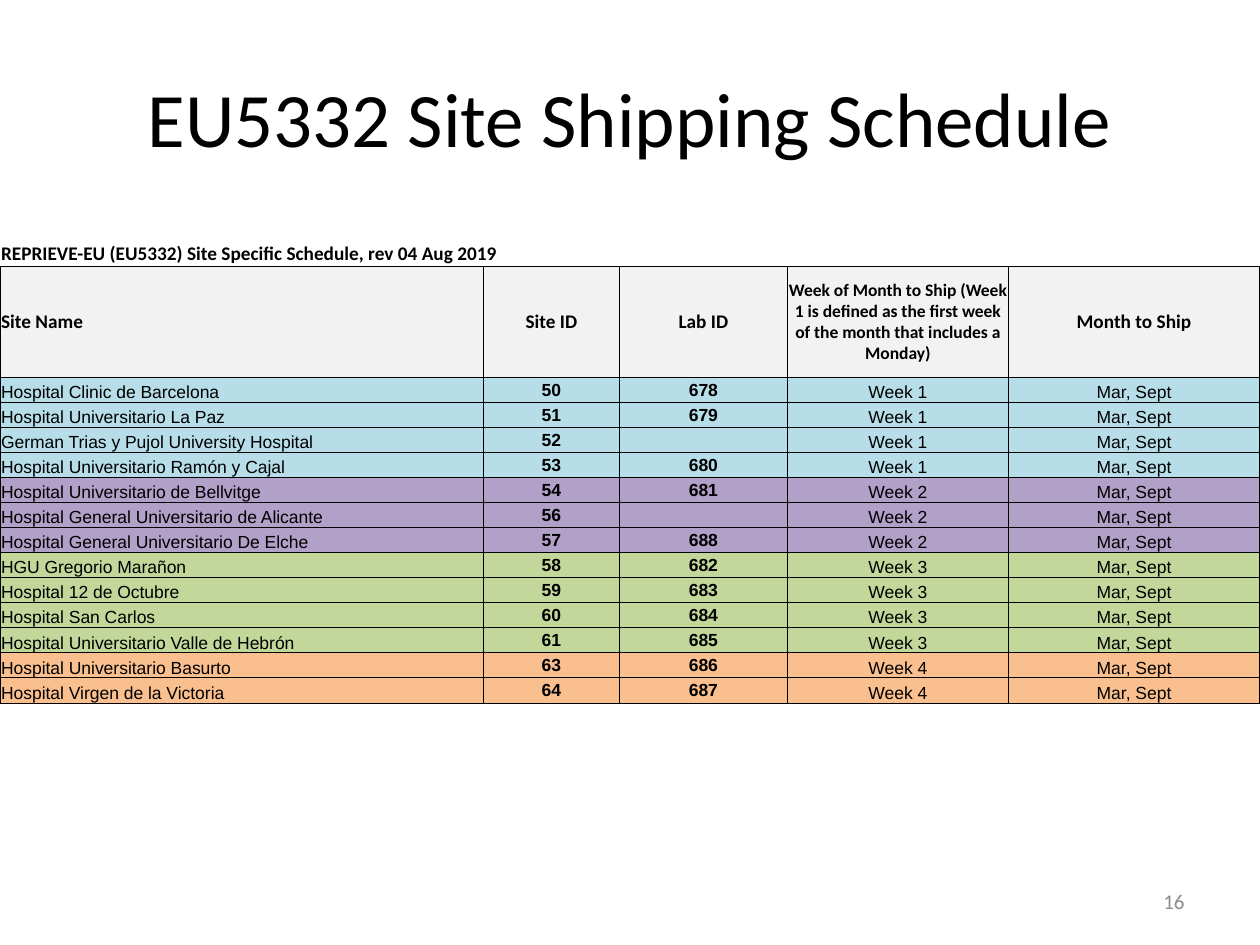
from dataclasses import dataclass
from typing import Optional

from lxml.etree import SubElement
from pptx import Presentation
from pptx.dml.color import RGBColor
from pptx.enum.text import MSO_ANCHOR, PP_ALIGN
from pptx.oxml.ns import qn
from pptx.util import Pt


@dataclass(frozen=True)
class Theme:
    heading_font: str = "Calibri"
    body_font: str = "Arial"
    ink: str = "000000"
    muted: str = "8C8C8C"
    header_fill: str = "F2F2F2"
    title_size: float = 44
    number_size: float = 12
    header_size: float = 11
    body_size: float = 10
    border_width: float = 0.5


THEME = Theme()


@dataclass(frozen=True)
class TextStyle:
    font: str
    size: float
    bold: bool = False
    color: str = THEME.ink
    align: PP_ALIGN = PP_ALIGN.CENTER
    anchor: MSO_ANCHOR = MSO_ANCHOR.MIDDLE


@dataclass(frozen=True)
class Box:
    left: float
    top: float
    width: float
    height: float


@dataclass(frozen=True)
class ShippingWeek:
    label: str
    fill: str
    sites: tuple[tuple[str, str, str], ...]  # site name, site ID, lab ID


TITLE = TextStyle(THEME.heading_font, THEME.title_size)
PAGE_NUMBER = TextStyle(THEME.heading_font, THEME.number_size,
                        color=THEME.muted, align=PP_ALIGN.RIGHT)
CAPTION = TextStyle(THEME.heading_font, THEME.header_size, True,
                    align=PP_ALIGN.LEFT, anchor=MSO_ANCHOR.BOTTOM)
HEADER = TextStyle(THEME.heading_font, THEME.header_size, True)
HEADER_LEFT = TextStyle(THEME.heading_font, THEME.header_size, True, align=PP_ALIGN.LEFT)
HEADER_SMALL = TextStyle(THEME.heading_font, THEME.body_size, True)
SITE_NAME = TextStyle(THEME.body_font, THEME.body_size,
                      align=PP_ALIGN.LEFT, anchor=MSO_ANCHOR.BOTTOM)
IDENTIFIER = TextStyle(THEME.body_font, THEME.body_size, True)
TIMING = TextStyle(THEME.body_font, THEME.body_size, anchor=MSO_ANCHOR.BOTTOM)

TABLE_CAPTION = "REPRIEVE-EU (EU5332) Site Specific Schedule, rev 04 Aug 2019"
HEADERS = (
    ("Site Name", HEADER_LEFT),
    ("Site ID", HEADER),
    ("Lab ID", HEADER),
    ("Week of Month to Ship (Week 1 is defined as the first week "
     "of the month that includes a Monday)", HEADER_SMALL),
    ("Month to Ship", HEADER),
)
SITE_STYLES = (SITE_NAME, IDENTIFIER, IDENTIFIER, TIMING, TIMING)
SHIPPING_MONTHS = "Mar, Sept"
SCHEDULE = (
    ShippingWeek("Week 1", "B7DEE8", (
        ("Hospital Clinic de Barcelona", "50", "678"),
        ("Hospital Universitario La Paz", "51", "679"),
        ("German Trias y Pujol University Hospital", "52", ""),
        ("Hospital Universitario Ramón y Cajal", "53", "680"),
    )),
    ShippingWeek("Week 2", "B1A0C7", (
        ("Hospital Universitario de Bellvitge", "54", "681"),
        ("Hospital General Universitario de Alicante", "56", ""),
        ("Hospital General Universitario De Elche", "57", "688"),
    )),
    ShippingWeek("Week 3", "C4D79B", (
        ("HGU Gregorio Marañon", "58", "682"),
        ("Hospital 12 de Octubre", "59", "683"),
        ("Hospital San Carlos", "60", "684"),
        ("Hospital Universitario Valle de Hebrón", "61", "685"),
    )),
    ShippingWeek("Week 4", "FABF8F", (
        ("Hospital Universitario Basurto", "63", "686"),
        ("Hospital Virgen de la Victoria", "64", "687"),
    )),
)

TABLE_TOP = 131.8
COLUMN_WIDTHS = (276.2, 77.8, 96, 126.2, 143.8)
CAPTION_HEIGHT, HEADER_HEIGHT, SITE_HEIGHT = 20.2, 63.6, 14.33


def write_text(text_frame, text: str, style: TextStyle) -> None:
    text_frame.text = text
    text_frame.word_wrap = True
    paragraph = text_frame.paragraphs[0]
    paragraph.alignment = style.align
    for run in paragraph.runs:
        run.font.name = style.font
        run.font.size = Pt(style.size)
        run.font.bold = style.bold
        run.font.color.rgb = RGBColor.from_string(style.color)
    if not text:  # keeps an empty cell from stretching its row
        SubElement(paragraph._p, qn("a:endParaRPr"), sz=str(int(style.size * 100)))


def add_label(slide, box: Box, text: str, style: TextStyle) -> None:
    label = slide.shapes.add_textbox(Pt(box.left), Pt(box.top), Pt(box.width), Pt(box.height))
    write_text(label.text_frame, text, style)
    label.text_frame.vertical_anchor = style.anchor


def set_borders(cell, visible_sides: str) -> None:
    properties = cell._tc.get_or_add_tcPr()
    for side in "LRTB":
        line = SubElement(properties, qn(f"a:ln{side}"), w=str(Pt(THEME.border_width)))
        if side in visible_sides:
            paint = SubElement(line, qn("a:solidFill"))
            SubElement(paint, qn("a:srgbClr"), val=THEME.ink)
        else:
            SubElement(line, qn("a:noFill"))


def fill_cell(cell, text: str, style: TextStyle, fill: Optional[str],
              visible_sides: str = "LRTB") -> None:
    write_text(cell.text_frame, text, style)
    cell.vertical_anchor = style.anchor
    cell.margin_left = cell.margin_right = cell.margin_top = Pt(0.6)
    cell.margin_bottom = Pt(0)
    set_borders(cell, visible_sides)
    if fill:
        cell.fill.solid()
        cell.fill.fore_color.rgb = RGBColor.from_string(fill)
    else:
        cell.fill.background()


def add_schedule(slide) -> None:
    site_rows = [((*site, week.label, SHIPPING_MONTHS), week.fill)
                 for week in SCHEDULE for site in week.sites]
    row_heights = (CAPTION_HEIGHT, HEADER_HEIGHT, *[SITE_HEIGHT] * len(site_rows))
    table = slide.shapes.add_table(
        len(row_heights), len(COLUMN_WIDTHS), Pt(0), Pt(TABLE_TOP),
        Pt(sum(COLUMN_WIDTHS)), Pt(sum(row_heights))).table
    table.first_row = table.horz_banding = False
    for column, width in zip(table.columns, COLUMN_WIDTHS):
        column.width = Pt(width)
    for row, height in zip(table.rows, row_heights):
        row.height = Pt(height)

    # Caption row, ruled only below
    for index in range(len(COLUMN_WIDTHS)):
        fill_cell(table.cell(0, index), TABLE_CAPTION if index == 0 else "",
                  CAPTION, None, "B")
    table.cell(0, 0).merge(table.cell(0, 1))

    # Column headings
    for index, (heading, style) in enumerate(HEADERS):
        fill_cell(table.cell(1, index), heading, style, THEME.header_fill)

    # Sites, coloured by shipping week
    for row_index, (values, fill) in enumerate(site_rows, start=2):
        for index, (value, style) in enumerate(zip(values, SITE_STYLES)):
            fill_cell(table.cell(row_index, index), value, style, fill)


def main() -> None:
    presentation = Presentation()
    presentation.slide_width, presentation.slide_height = Pt(720), Pt(540)
    slide = presentation.slides.add_slide(presentation.slide_layouts[6])
    add_label(slide, Box(36, 21.6, 648, 90), "EU5332 Site Shipping Schedule", TITLE)
    add_schedule(slide)
    add_label(slide, Box(516, 500.5, 168, 28.75), "16", PAGE_NUMBER)
    presentation.save("out.pptx")


if __name__ == "__main__":
    main()
